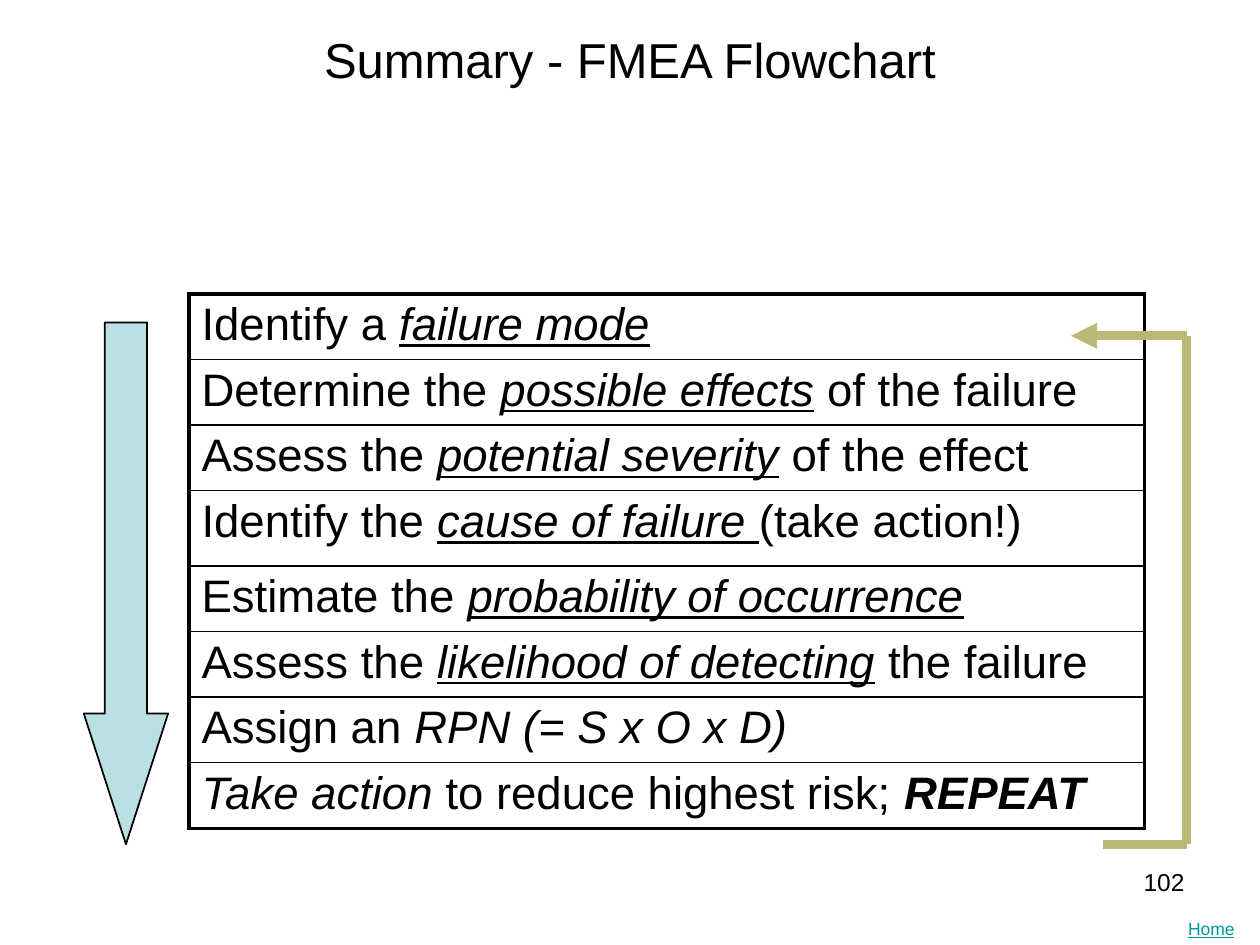
from itertools import pairwise

from lxml import etree
from pptx import Presentation
from pptx.dml.color import RGBColor
from pptx.enum.shapes import MSO_CONNECTOR, MSO_SHAPE
from pptx.enum.text import MSO_ANCHOR, PP_ALIGN
from pptx.oxml.ns import qn
from pptx.util import Cm, Pt

BLACK, TEAL, PALE_BLUE, OLIVE = "000000", "009999", "BBE0E3", "BBB973"

# Each step is a list of (text, style): i italic, u underlined, b bold
STEPS = [
    [("Identify a ", ""), ("failure mode", "iu")],
    [("Determine the ", ""), ("possible effects", "iu"), (" of the failure", "")],
    [("Assess the ", ""), ("potential severity", "iu"), (" of the effect", "")],
    [("Identify the ", ""), ("cause of failure", "iu"), (" ", "u"), ("(take action!)", "")],
    [("Estimate the ", ""), ("probability of occurrence", "iu")],
    [("Assess the ", ""), ("likelihood of detecting", "iu"), (" the failure", "")],
    [("Assign an ", ""), ("RPN (= S x O x D)", "i")],
    [("Take action", "i"), (" to reduce highest risk; ", ""), ("REPEAT", "bi")],
]
CAUSE_ROW = 3
ROW_HEIGHT, CAUSE_HEIGHT = 1.28, 1.52
LOOP = [(22.23, 17.02), (23.92, 17.02), (23.92, 6.77), (21.59, 6.77)]


def rgb(color):
    return RGBColor.from_string(color)


def write(tf, runs, size, color=BLACK, align=PP_ALIGN.LEFT):
    """Fill the first paragraph with (text, style) runs."""
    p = tf.paragraphs[0]
    p.alignment = align
    for text, style in runs:
        r = p.add_run()
        r.text = text
        font = r.font
        font.name, font.size = "Arial", Pt(size)
        font.color.rgb = rgb(color)
        font.bold, font.italic, font.underline = (k in style for k in "biu")


def add_text(s, box, runs, size, **fmt):
    tf = s.shapes.add_textbox(*map(Cm, box)).text_frame
    tf.word_wrap = True
    write(tf, runs, size, **fmt)


def set_border(cell, side, width):
    ln = etree.SubElement(cell._tc.get_or_add_tcPr(), qn(f"a:ln{side}"), w=str(Pt(width)))
    fill = etree.SubElement(ln, qn("a:solidFill"))
    etree.SubElement(fill, qn("a:srgbClr"), val=BLACK)


def add_steps(s):
    heights = [CAUSE_HEIGHT if i == CAUSE_ROW else ROW_HEIGHT for i in range(len(STEPS))]
    frame = s.shapes.add_table(len(STEPS), 1, Cm(3.81), Cm(5.93), Cm(19.26), Cm(sum(heights)))
    table = frame.table
    table.first_row = table.horz_banding = False
    last = len(STEPS) - 1
    for i, (runs, height) in enumerate(zip(STEPS, heights)):
        table.rows[i].height = Cm(height)
        cell = table.cell(i, 0)
        cell.margin_top = cell.margin_bottom = Cm(0.11)
        write(cell.text_frame, runs, 26)
        widths = {"L": 2.25, "R": 2.25, "T": 2.25 if i == 0 else 1, "B": 2.25 if i == last else 1}
        for side, width in widths.items():
            set_border(cell, side, width)
        cell.fill.background()


def add_line(s, start, end, arrow=False):
    line = s.shapes.add_connector(MSO_CONNECTOR.STRAIGHT, *map(Cm, start + end))
    line.line.color.rgb = rgb(OLIVE)
    line.line.width = Pt(5)
    if arrow:
        etree.SubElement(line.line._get_or_add_ln(), qn("a:tailEnd"), type="triangle")
    etree.SubElement(line._element.spPr, qn("a:effectLst"))


def main():
    prs = Presentation()
    prs.slide_width, prs.slide_height = Cm(25.4), Cm(19.05)
    s = prs.slides.add_slide(prs.slide_layouts[5])

    title = s.shapes.title
    title.left, title.top, title.width, title.height = map(Cm, (1.27, 0.2, 22.86, 1.98))
    title.text_frame.vertical_anchor = MSO_ANCHOR.MIDDLE
    write(title.text_frame, [("Summary - FMEA Flowchart", "")], 28, align=PP_ALIGN.CENTER)

    add_text(s, (23.7, 18.39, 1.7, 0.68), [("Home", "u")], 10, color=TEAL)
    add_text(s, (18.21, 17.35, 5.92, 1.32), [("102", "")], 14, align=PP_ALIGN.RIGHT)
    add_steps(s)

    arrow = s.shapes.add_shape(MSO_SHAPE.DOWN_ARROW, *map(Cm, (1.69, 6.5, 1.7, 10.52)))
    arrow.adjustments[0], arrow.adjustments[1] = 0.5, 1.55
    arrow.shadow.inherit = False
    arrow.fill.solid()
    arrow.fill.fore_color.rgb = rgb(PALE_BLUE)
    arrow.line.color.rgb = rgb(BLACK)
    arrow.line.width = Pt(1)

    for start, end in pairwise(LOOP):
        add_line(s, start, end, arrow=end == LOOP[-1])

    prs.save("out.pptx")


if __name__ == "__main__":
    main()
